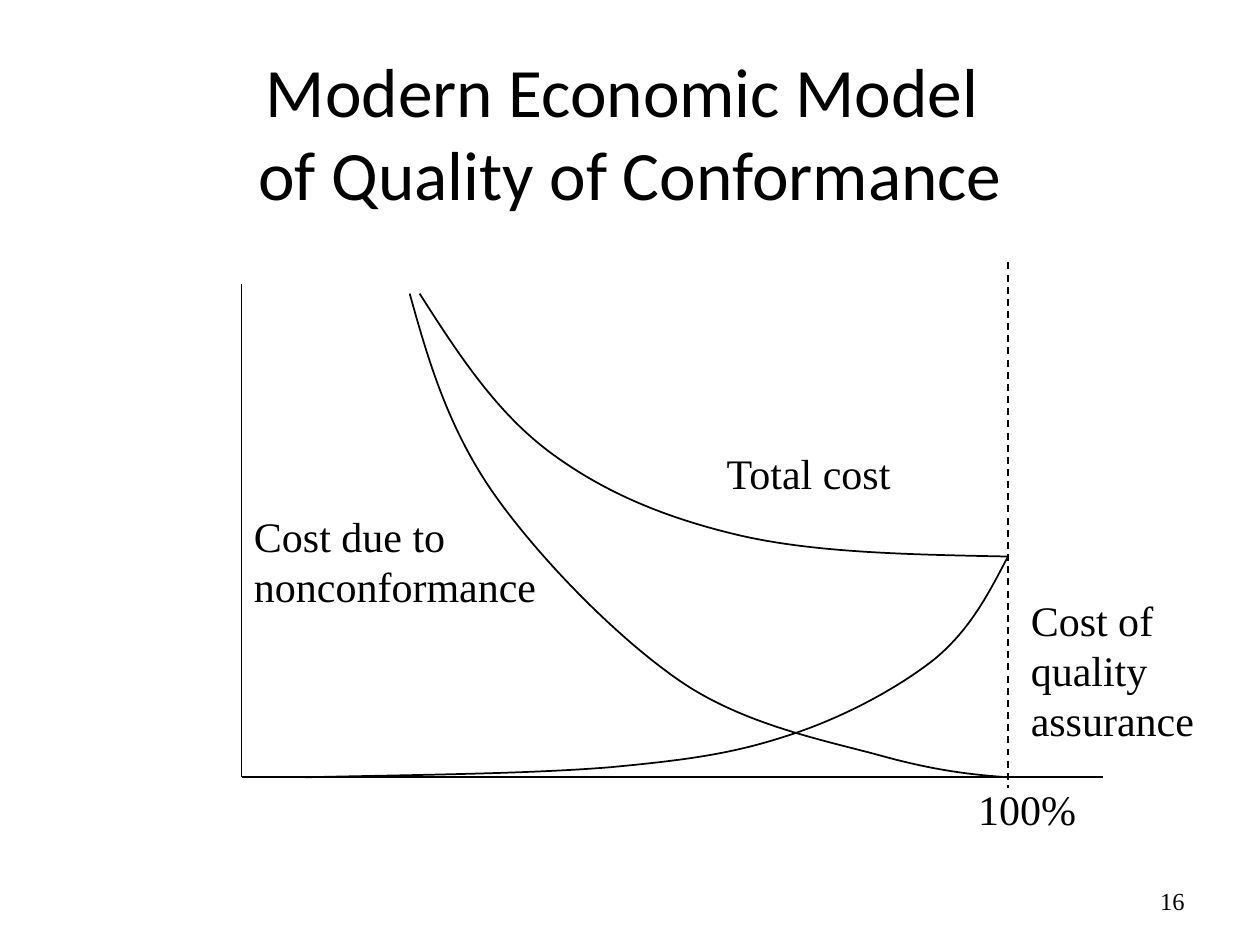
from dataclasses import dataclass

from lxml import etree
from pptx import Presentation
from pptx.dml.color import RGBColor
from pptx.enum import dml, shapes, text
from pptx.oxml import ns
from pptx.util import Cm, Pt

BLACK = RGBColor(0, 0, 0)
SERIF = "Times New Roman"

# Key places of the plot, in cm
LEFT, BASE, FULL, MEET = 4.87, 15.67, 20.32, 11.22
Point = tuple[float, float]


@dataclass
class Label:
    words: str
    x: float
    y: float
    w: float
    h: float
    size: float = 24
    font: str = SERIF
    align: text.PP_ALIGN = text.PP_ALIGN.LEFT
    anchor: text.MSO_ANCHOR = text.MSO_ANCHOR.TOP


@dataclass
class Rule:
    start: Point
    end: Point
    dashed: bool = False


@dataclass
class Curve:
    """A start, then two handles and an end for each Bézier piece."""
    knots: list[Point]


TITLE = Label("Modern Economic Model \vof Quality of Conformance", 1.91, 1.05, 21.59, 3.18,
              39.6, "Calibri", text.PP_ALIGN.CENTER, text.MSO_ANCHOR.MIDDLE)
NUMBER = Label("16", 18.21, 17.65, 5.92, 1.02, 14,
               align=text.PP_ALIGN.RIGHT, anchor=text.MSO_ANCHOR.MIDDLE)

AXES = [Rule((LEFT, 5.72), (LEFT, BASE)), Rule((LEFT, BASE), (22.23, BASE))]
LIMIT = Rule((FULL, 5.29), (FULL, 15.88), dashed=True)

QUALITY = Curve([(6.15, BASE), (8.41, 15.62), (10.64, 15.6), (12.27, 15.47),
                 (13.89, 15.32), (14.78, 15.19), (15.88, 14.83),
                 (16.97, 14.48), (18.08, 13.89), (18.85, 13.28),
                 (19.58, 12.67), (19.94, 11.94), (FULL, MEET)])
DEFECTS = Curve([(8.26, 5.92), (8.64, 7.29), (9.04, 8.64), (9.96, 9.96),
                 (10.87, 11.25), (12.45, 12.88), (13.77, 13.77),
                 (15.06, 14.63), (16.69, 14.94), (17.78, 15.24),
                 (18.87, 15.54), (19.61, 15.62), (FULL, BASE)])
TOTAL = Curve([(8.46, 5.92), (9.22, 7.11), (9.98, 8.28), (11.05, 9.09),
               (12.14, 9.91), (13.39, 10.44), (14.94, 10.8),
               (16.48, 11.15), (18.39, 11.18), (FULL, MEET)])

LABELS = [
    Label("Total cost", 14.4, 8.89, 5.08, 1.27),
    Label("Cost due to nonconformance", LEFT, 10.16, 6.78, 2.29),
    Label("Cost of quality assurance", 20.53, 11.85, 4.65, 3.3),
]
MARK = Label("100%", 19.47, BASE, 2.97, 1.27)


def ink(line) -> None:
    line.color.rgb = BLACK
    line.width = Pt(1)


def add_label(slide, item: Label) -> None:
    box = slide.shapes.add_textbox(Cm(item.x), Cm(item.y), Cm(item.w), Cm(item.h))
    frame = box.text_frame
    frame.word_wrap = True
    frame.vertical_anchor = item.anchor
    frame.text = item.words
    para = frame.paragraphs[0]
    para.alignment = item.align
    for run in para.runs:
        run.font.name = item.font
        run.font.size = Pt(item.size)
        run.font.color.rgb = BLACK


def add_rule(slide, rule: Rule) -> None:
    ends = [Cm(v) for v in rule.start + rule.end]
    line = slide.shapes.add_connector(shapes.MSO_CONNECTOR.STRAIGHT, *ends)
    ink(line.line)
    if rule.dashed:
        line.line.dash_style = dml.MSO_LINE.DASH
    etree.SubElement(line._element.spPr, ns.qn("a:effectLst"))


def add_curve(slide, curve: Curve) -> None:
    first, *rest = [(Cm(x), Cm(y)) for x, y in curve.knots]
    pen = slide.shapes.build_freeform(*first)
    pen.add_line_segments(rest, close=False)
    shape = pen.convert_to_shape()
    shape.shadow.inherit = False
    shape.fill.background()
    ink(shape.line)

    # Join each three straight steps into one cubic piece
    steps = list(shape._element.iter(ns.qn("a:lnTo")))
    for i in range(0, len(steps), 3):
        trio = steps[i:i + 3]
        cubic = etree.Element(ns.qn("a:cubicBezTo"))
        trio[0].addprevious(cubic)
        for step in trio:
            cubic.append(step[0])
            step.getparent().remove(step)


def main() -> None:
    deck = Presentation()
    deck.slide_width, deck.slide_height = Cm(25.4), Cm(19.05)
    slide = deck.slides.add_slide(deck.slide_layouts[6])

    # Each part is drawn over the ones before it
    parts = [TITLE, NUMBER, *AXES, QUALITY, DEFECTS, *LABELS, TOTAL, MARK, LIMIT]
    draw = {Label: add_label, Rule: add_rule, Curve: add_curve}
    for part in parts:
        draw[type(part)](slide, part)

    deck.save("out.pptx")


if __name__ == "__main__":
    main()
